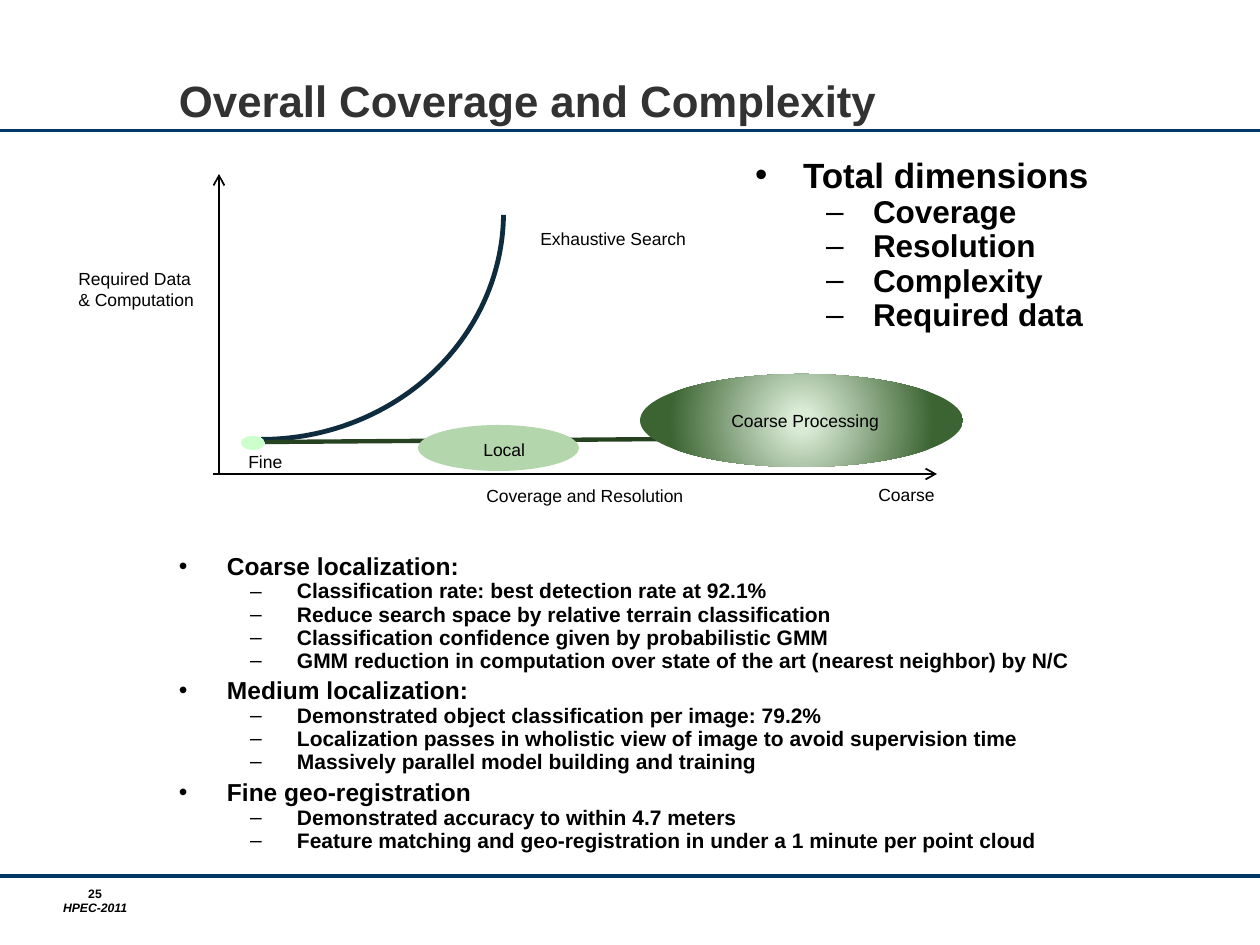
from lxml import etree
from pptx import Presentation
from pptx.dml.color import RGBColor
from pptx.enum.shapes import MSO_CONNECTOR, MSO_SHAPE
from pptx.enum.text import MSO_ANCHOR, PP_ALIGN
from pptx.oxml.ns import qn
from pptx.util import Emu, Pt

STRAIGHT = MSO_CONNECTOR.STRAIGHT
ARC, OVAL = MSO_SHAPE.ARC, MSO_SHAPE.OVAL
TOP, BOTTOM = MSO_ANCHOR.TOP, MSO_ANCHOR.BOTTOM
LEFT, CENTER = PP_ALIGN.LEFT, PP_ALIGN.CENTER

FONT = "Arial"
BLACK = RGBColor(0x00, 0x00, 0x00)
TITLE_GRAY = RGBColor(0x32, 0x32, 0x32)
RULE_BLUE = RGBColor(0x00, 0x37, 0x67)
CURVE_NAVY = RGBColor(0x0E, 0x2C, 0x3E)
TREND_GREEN = RGBColor(0x27, 0x42, 0x21)
FINE_GREEN = RGBColor(0xCC, 0xFF, 0xCC)
LOCAL_GREEN = RGBColor(0xB3, 0xD6, 0xAC)
COARSE_LIGHT = RGBColor(0xD9, 0xEA, 0xD5)
COARSE_DARK = RGBColor(0x3B, 0x64, 0x32)

BULLETS = [("•", 48, -48), ("–", 118, -47)]

DIMENSIONS = [
    ("Total dimensions", ["Coverage", "Resolution", "Complexity", "Required data"]),
]
FINDINGS = [
    ("Coarse localization:", [
        "Classification rate: best detection rate at 92.1%",
        "Reduce search space by relative terrain classification",
        "Classification confidence given by probabilistic GMM",
        "GMM reduction in computation over state of the art (nearest neighbor) by N/C",
    ]),
    ("Medium localization:", [
        "Demonstrated object classification per image: 79.2%",
        "Localization passes in wholistic view of image to avoid supervision time",
        "Massively parallel model building and training",
    ]),
    ("Fine geo-registration", [
        "Demonstrated accuracy to within 4.7 meters",
        "Feature matching and geo-registration in under a 1 minute per point cloud",
    ]),
]
LABELS = [
    ("Coverage and Resolution", 474, 479, 426, 49),
    ("Required Data\n& Computation", 66, 262, 270, 79),
    ("Coarse", 866, 478, 156, 49),
    ("Fine", 236, 445, 113, 49),
    ("Local", 471, 433, 129, 49),
    ("Coarse Processing", 719, 404, 331, 49),
    ("Exhaustive Search", 528, 222, 328, 49),
]


def px(length):
    return Emu(round(length * 914400 / 126))


def box_px(*lengths):
    return [px(length) for length in lengths]


def set_font(paragraph, size, color=BLACK, bold=False, italic=False):
    font = paragraph.font
    font.name, font.size = FONT, Pt(size)
    font.bold, font.italic = bold, italic
    font.color.rgb = color


def prepare_frame(frame, margins=(0, 0), anchor=TOP):
    frame.word_wrap = True
    frame.vertical_anchor = anchor
    frame.margin_left = frame.margin_right = Pt(margins[0])
    frame.margin_top = frame.margin_bottom = Pt(margins[1])


def add_title(slide, text):
    title = slide.shapes.title
    title.left, title.top, title.width, title.height = box_px(179, 42, 1040, 84)
    prepare_frame(title.text_frame, anchor=BOTTOM)
    title.text_frame.text = text
    heading = title.text_frame.paragraphs[0]
    heading.alignment = LEFT
    heading.line_spacing = Pt(28)
    set_font(heading, 25, TITLE_GRAY, bold=True)


def add_line(slide, start, end, color, width, arrow=False):
    line = slide.shapes.add_connector(STRAIGHT, *box_px(*start, *end))
    line.line.color.rgb = color
    line.line.width = Pt(width)
    if arrow:
        etree.SubElement(line.line._get_or_add_ln(), qn("a:tailEnd"), type="arrow")
    etree.SubElement(line._element.spPr, qn("a:effectLst"))


def add_curve(slide):
    curve = slide.shapes.add_shape(ARC, *box_px(34, -30, 454, 485))
    curve.shadow.inherit = False
    curve.rotation = 90
    curve.adjustments[0], curve.adjustments[1] = 162.35, 0
    curve.fill.background()
    curve.line.color.rgb = CURVE_NAVY
    curve.line.width = Pt(2.75)


def add_ellipse(slide, box, color, edge_color=None):
    ellipse = slide.shapes.add_shape(OVAL, *box_px(*box))
    ellipse.shadow.inherit = False
    ellipse.line.fill.background()
    if edge_color is None:
        ellipse.fill.solid()
        ellipse.fill.fore_color.rgb = color
        return
    ellipse.fill.gradient()
    stops = zip(ellipse.fill.gradient_stops, (0.07, 0.79), (color, edge_color))
    for stop, position, stop_color in stops:
        stop.position = position
        stop.color.rgb = stop_color
    gradient = ellipse._element.spPr.find(qn("a:gradFill"))
    radial = etree.Element(qn("a:path"), path="circle")
    etree.SubElement(radial, qn("a:fillToRect"), l="50000", t="50000", r="50000", b="50000")
    gradient.replace(gradient.find(qn("a:lin")), radial)


def add_label(slide, text, *box):
    frame = slide.shapes.add_textbox(*box_px(*box)).text_frame
    prepare_frame(frame, margins=(7.2, 3.6))
    frame.text = text
    for paragraph in frame.paragraphs:
        set_font(paragraph, 10)


def add_outline(slide, box, topics, sizes):
    frame = slide.shapes.add_textbox(*box_px(*box)).text_frame
    prepare_frame(frame)
    entries = [
        entry for topic, details in topics
        for entry in [(topic, 0)] + [(detail, 1) for detail in details]
    ]
    frame.text = "\n".join(text for text, level in entries)
    for index, (paragraph, (text, level)) in enumerate(zip(frame.paragraphs, entries)):
        bullet, margin, indent = BULLETS[level]
        paragraph.level = level
        properties = paragraph._p.get_or_add_pPr()
        properties.set("marL", str(px(margin)))
        properties.set("indent", str(px(indent)))
        etree.SubElement(properties, qn("a:buFont"), typeface=FONT)
        etree.SubElement(properties, qn("a:buChar"), char=bullet)
        paragraph.line_spacing = 0.9
        if index:
            paragraph.space_before = Pt(0.2 if level else sizes[0] / 4)
        set_font(paragraph, sizes[level], bold=True)


def add_footer(slide):
    frame = slide.shapes.add_textbox(*box_px(49, 886, 92, 48)).text_frame
    prepare_frame(frame)
    frame.text = "25\nHPEC-2011"
    for paragraph, italic in zip(frame.paragraphs, (False, True)):
        paragraph.alignment = CENTER
        set_font(paragraph, 7, bold=True, italic=italic)


def add_complexity_diagram(slide):
    add_curve(slide)
    add_line(slide, (219, 474), (219, 174), BLACK, 1, arrow=True)
    add_line(slide, (213, 474), (937, 474), BLACK, 1, arrow=True)
    add_ellipse(slide, (241, 436, 24, 14), FINE_GREEN)
    add_line(slide, (265, 442), (816, 438), TREND_GREEN, 2.5)
    add_ellipse(slide, (640, 374, 323, 93), COARSE_LIGHT, COARSE_DARK)
    add_ellipse(slide, (418, 425, 161, 46), LOCAL_GREEN)
    for label in LABELS:
        add_label(slide, *label)


def main():
    deck = Presentation()
    deck.slide_width, deck.slide_height = box_px(1260, 945)
    slide = deck.slides.add_slide(deck.slide_layouts[5])
    add_footer(slide)
    for y in (131, 876):
        add_line(slide, (-53, y), (1354, y), RULE_BLUE, 1.75)
    add_outline(slide, (755, 158, 411, 640), DIMENSIONS, (20, 18))
    add_title(slide, "Overall Coverage and Complexity")
    add_complexity_diagram(slide)
    add_outline(slide, (179, 554, 987, 296), FINDINGS, (14, 12))
    deck.save("out.pptx")


if __name__ == "__main__":
    main()
